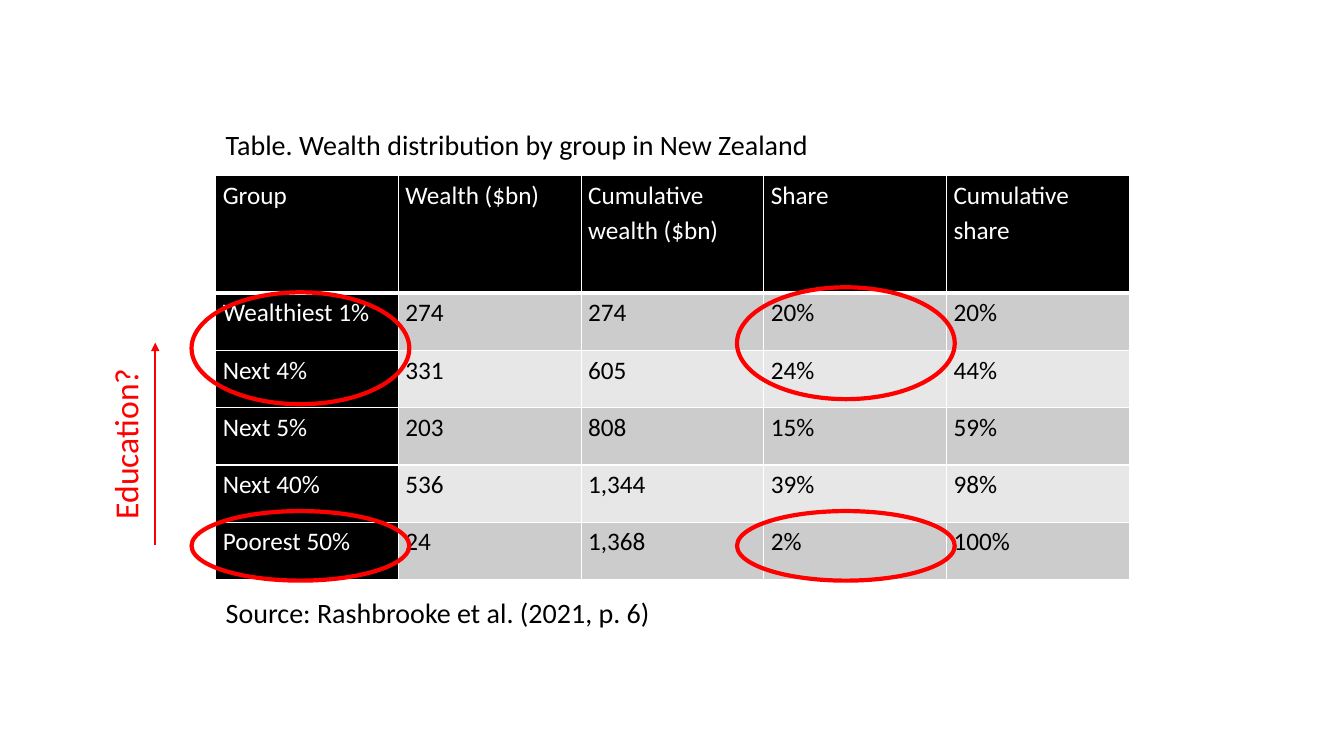
from dataclasses import dataclass
from typing import Any

from pptx import Presentation
from pptx.dml.color import RGBColor
from pptx.enum.shapes import MSO_CONNECTOR, MSO_SHAPE
from pptx.enum.text import MSO_ANCHOR, MSO_AUTO_SIZE
from pptx.oxml.ns import qn
from pptx.util import Inches, Pt
from lxml.etree import SubElement


@dataclass(frozen=True)
class Theme:
    font: str = "Calibri"
    black: str = "000000"
    white: str = "FFFFFF"
    red: str = "FF0000"
    bands: tuple[str, str] = ("CCCCCC", "E7E7E7")
    cell_size: int = 18
    caption_size: int = 20
    label_size: int = 24


@dataclass(frozen=True)
class Box:
    left: float
    top: float
    width: float
    height: float

    def emu(self) -> tuple[int, int, int, int]:
        return (Inches(self.left), Inches(self.top),
                Inches(self.width), Inches(self.height))


@dataclass(frozen=True)
class Label:
    text: str
    box: Box
    size: int
    color: str
    rotation: int = 0
    wrap: bool = True
    anchor: MSO_ANCHOR = MSO_ANCHOR.MIDDLE


THEME = Theme()
TABLE_BOX = Box(2.14, 1.74, 9.06, 4.01)
HEADER_HEIGHT = 1.17
ROWS = [
    ("Group", "Wealth ($bn)", "Cumulative wealth ($bn)", "Share", "Cumulative share"),
    ("Wealthiest 1%", "274", "274", "20%", "20%"),
    ("Next 4%", "331", "605", "24%", "44%"),
    ("Next 5%", "203", "808", "15%", "59%"),
    ("Next 40%", "536", "1,344", "39%", "98%"),
    ("Poorest 50%", "24", "1,368", "2%", "100%"),
]
LABELS = [
    Label("Source: Rashbrooke et al. (2021, p. 6)", Box(2.14, 5.85, 9.06, 0.44),
          THEME.caption_size, THEME.black),
    Label("Table. Wealth distribution by group in New Zealand",
          Box(2.14, 1.21, 9.06, 0.44), THEME.caption_size, THEME.black),
    Label("Education?", Box(0.39, 4.15, 1.7, 0.5), THEME.label_size, THEME.red,
          rotation=270, wrap=False, anchor=MSO_ANCHOR.TOP),
]
GROUP_LEFT, SHARE_LEFT, RING_WIDTH = 1.9, 7.31, 2.16
RINGS = [
    Box(GROUP_LEFT, 5.07, RING_WIDTH, 0.69),
    Box(SHARE_LEFT, 5.07, RING_WIDTH, 0.69),
    Box(GROUP_LEFT, 2.9, RING_WIDTH, 1.11),
    Box(SHARE_LEFT, 2.85, RING_WIDTH, 1.11),
]


def rgb(color: str) -> RGBColor:
    return RGBColor.from_string(color)


def write_text(tf: Any, text: str, *, size: int, color: str,
               line_spacing: float | None = None, space_after: int = 0) -> None:
    p = tf.paragraphs[0]
    p.line_spacing = line_spacing
    p.space_after = Pt(space_after)
    r = p.add_run()
    r.text = text
    r.font.name = THEME.font
    r.font.size = Pt(size)
    r.font.color.rgb = rgb(color)


def set_borders(cell: Any, top: int, bottom: int) -> None:
    """Draw white borders; call before the fill, which must follow them in the XML."""
    tc_pr = cell._tc.get_or_add_tcPr()
    for tag, points in (("a:lnL", 1), ("a:lnR", 1), ("a:lnT", top), ("a:lnB", bottom)):
        ln = SubElement(tc_pr, qn(tag), w=str(Pt(points)))
        SubElement(SubElement(ln, qn("a:solidFill")), qn("a:srgbClr"), val=THEME.white)


def add_wealth_table(slide: Any) -> None:
    n_rows, n_cols = len(ROWS), len(ROWS[0])
    table = slide.shapes.add_table(n_rows, n_cols, *TABLE_BOX.emu()).table
    for column in table.columns:
        column.width = Inches(TABLE_BOX.width / n_cols)
    body_height = (TABLE_BOX.height - HEADER_HEIGHT) / (n_rows - 1)
    for i, values in enumerate(ROWS):
        table.rows[i].height = Inches(body_height if i else HEADER_HEIGHT)
        for j, value in enumerate(values):
            cell = table.cell(i, j)
            heading = i == 0 or j == 0
            set_borders(cell, top=3 if i == 1 else 1, bottom=3 if i == 0 else 1)
            cell.fill.solid()
            cell.fill.fore_color.rgb = rgb(
                THEME.black if heading else THEME.bands[(i - 1) % 2])
            cell.margin_left = cell.margin_right = Inches(0.07)
            cell.margin_top = cell.margin_bottom = 0
            write_text(cell.text_frame, value, size=THEME.cell_size,
                       color=THEME.white if heading else THEME.black,
                       line_spacing=1.15, space_after=8)


def add_label(slide: Any, label: Label) -> None:
    sp = slide.shapes.add_textbox(*label.box.emu())
    sp.rotation = label.rotation
    tf = sp.text_frame
    tf.word_wrap = label.wrap
    tf.auto_size = MSO_AUTO_SIZE.SHAPE_TO_FIT_TEXT
    tf.vertical_anchor = label.anchor
    write_text(tf, label.text, size=label.size, color=label.color)


def add_ring(slide: Any, box: Box) -> None:
    sp = slide.shapes.add_shape(MSO_SHAPE.OVAL, *box.emu())
    sp.shadow.inherit = False
    sp.fill.background()
    sp.line.color.rgb = rgb(THEME.red)
    sp.line.width = Pt(3)


def add_up_arrow(slide: Any, x: float, bottom: float, top: float) -> None:
    arrow = slide.shapes.add_connector(
        MSO_CONNECTOR.STRAIGHT, Inches(x), Inches(bottom), Inches(x), Inches(top))
    arrow.line.color.rgb = rgb(THEME.red)
    arrow.line.width = Pt(1.5)
    SubElement(arrow.line._get_or_add_ln(), qn("a:tailEnd"), type="triangle")
    SubElement(arrow._element.spPr, qn("a:effectLst"))


def main() -> None:
    prs = Presentation()
    prs.slide_width, prs.slide_height = Inches(13.33), Inches(7.5)
    slide = prs.slides.add_slide(prs.slide_layouts[6])
    add_wealth_table(slide)
    for ring in RINGS:
        add_ring(slide, ring)
    add_up_arrow(slide, x=1.54, bottom=5.41, top=3.4)
    for label in LABELS:
        add_label(slide, label)
    prs.save("out.pptx")


if __name__ == "__main__":
    main()
